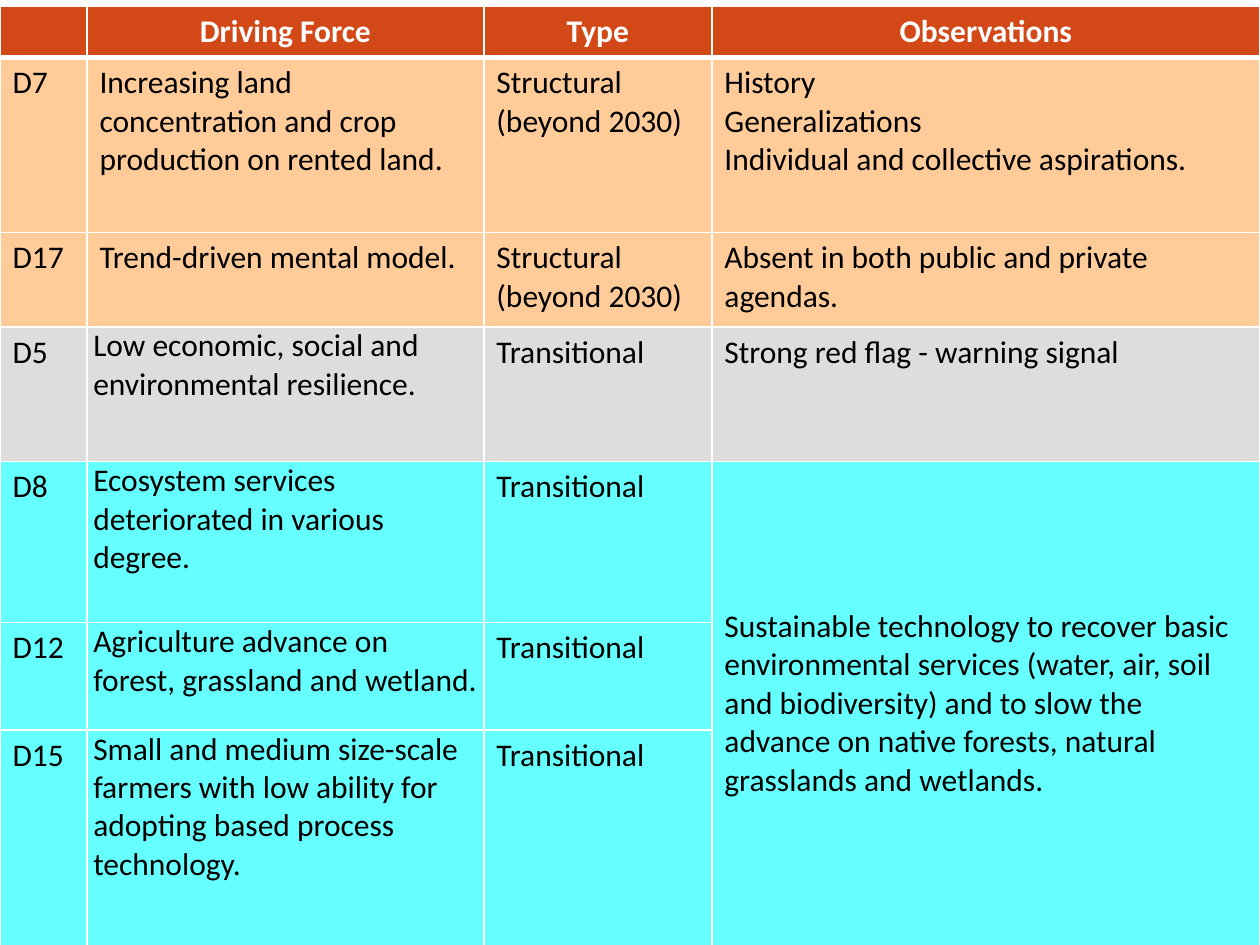
from dataclasses import dataclass

from lxml import etree
from pptx import Presentation
from pptx.dml.color import RGBColor
from pptx.enum.text import MSO_ANCHOR, PP_ALIGN
from pptx.oxml.ns import qn
from pptx.table import Table, _Cell
from pptx.util import Pt

CENTER = PP_ALIGN.CENTER
MIDDLE = MSO_ANCHOR.MIDDLE

FONT_NAME = "Calibri"
FONT_SIZE = 18
WHITE, BLACK = "FFFFFF", "000000"
HEADER_FILL = "D34817"
STRUCTURAL_FILL, WARNING_FILL, RECOVERY_FILL = "FFCC99", "DDDDDD", "66FFFF"

SLIDE_WIDTH, SLIDE_HEIGHT = 720, 540
TABLE_TOP = 3.6
COLUMN_WIDTHS = (49.7, 226.8, 130.3, 313.2)
HEADER_HEIGHT = 29
HEADER_LABELS = ("", "Driving Force", "Type", "Observations")
FORCE_COLUMN, OBSERVATION_COLUMN = 1, 3


@dataclass(frozen=True)
class DrivingForce:
    code: str
    description: str
    kind: str
    observation: str
    fill: str
    height: float
    tight: bool = True


STRUCTURAL = "Structural\n(beyond 2030)"
TRANSITIONAL = "Transitional"

DRIVING_FORCES = (
    DrivingForce("D7", "Increasing land concentration and crop production on rented land.",
                 STRUCTURAL,
                 "History\nGeneralizations\nIndividual and collective aspirations.",
                 STRUCTURAL_FILL, 100, tight=False),
    DrivingForce("D17", "Trend-driven mental model.", STRUCTURAL,
                 "Absent in both public and private agendas.",
                 STRUCTURAL_FILL, 54, tight=False),
    DrivingForce("D5", "Low economic, social and environmental resilience.",
                 TRANSITIONAL, "Strong red flag - warning signal", WARNING_FILL, 77),
    DrivingForce("D8", "Ecosystem services deteriorated in various degree.",
                 TRANSITIONAL,
                 "Sustainable technology to recover basic environmental services "
                 "(water, air, soil and biodiversity) and to slow the advance on "
                 "native forests, natural grasslands and wetlands.",
                 RECOVERY_FILL, 92),
    DrivingForce("D12", "Agriculture advance on forest, grassland and wetland.",
                 TRANSITIONAL, "", RECOVERY_FILL, 61.4),
    DrivingForce("D15", "Small and medium size-scale farmers with low ability for "
                 "adopting based process technology.",
                 TRANSITIONAL, "", RECOVERY_FILL, 123),
)
MERGE_FIRST_ROW, MERGE_LAST_ROW = 4, 6


def color(hex_value: str) -> RGBColor:
    return RGBColor.from_string(hex_value)


def add_border(cell: _Cell, side: str, width: float) -> None:
    """Draw a white line on one side (L, R, T or B) of the cell."""
    properties = cell._tc.get_or_add_tcPr()
    line = etree.SubElement(properties, qn(f"a:ln{side}"), w=str(Pt(width)))
    solid = etree.SubElement(line, qn("a:solidFill"))
    etree.SubElement(solid, qn("a:srgbClr"), val=WHITE)


def format_cell(cell: _Cell, text: str, fill: str, borders: dict[str, float],
                header: bool = False) -> None:
    for side, width in borders.items():
        add_border(cell, side, width)
    cell.fill.solid()
    cell.fill.fore_color.rgb = color(fill)
    cell.text = text
    for paragraph in cell.text_frame.paragraphs:
        if header:
            paragraph.alignment = CENTER
        paragraph.font.name = FONT_NAME
        paragraph.font.size = Pt(FONT_SIZE)
        paragraph.font.bold = header
        paragraph.font.color.rgb = color(WHITE if header else BLACK)


def fill_header(table: Table) -> None:
    table.rows[0].height = Pt(HEADER_HEIGHT)
    for column, label in enumerate(HEADER_LABELS):
        format_cell(table.cell(0, column), label, HEADER_FILL,
                    {"L": 1, "R": 1, "T": 1, "B": 3}, header=True)


def fill_force_row(table: Table, row: int, force: DrivingForce) -> None:
    table.rows[row].height = Pt(force.height)
    borders = {"L": 1, "R": 1, "T": 1, "B": 1}
    if row == 1:
        del borders["T"]  # the thick header line shows here
    texts = (force.code, force.description, force.kind, force.observation)
    for column, text in enumerate(texts):
        format_cell(table.cell(row, column), text, force.fill, borders)
    if force.tight:
        cell = table.cell(row, FORCE_COLUMN)
        cell.margin_left = cell.margin_right = Pt(3.6)
        cell.margin_top = cell.margin_bottom = Pt(0)


def main() -> None:
    presentation = Presentation()
    presentation.slide_width = Pt(SLIDE_WIDTH)
    presentation.slide_height = Pt(SLIDE_HEIGHT)
    slide = presentation.slides.add_slide(presentation.slide_layouts[6])

    table = slide.shapes.add_table(
        len(DRIVING_FORCES) + 1, len(COLUMN_WIDTHS), Pt(0), Pt(TABLE_TOP),
        Pt(SLIDE_WIDTH), Pt(SLIDE_HEIGHT - TABLE_TOP)).table
    table.horz_banding = False
    for column, width in zip(table.columns, COLUMN_WIDTHS):
        column.width = Pt(width)

    fill_header(table)
    for row, force in enumerate(DRIVING_FORCES, start=1):
        fill_force_row(table, row, force)

    shared_observation = table.cell(MERGE_FIRST_ROW, OBSERVATION_COLUMN)
    shared_observation.merge(table.cell(MERGE_LAST_ROW, OBSERVATION_COLUMN))
    shared_observation.vertical_anchor = MIDDLE

    presentation.save("out.pptx")


if __name__ == "__main__":
    main()
